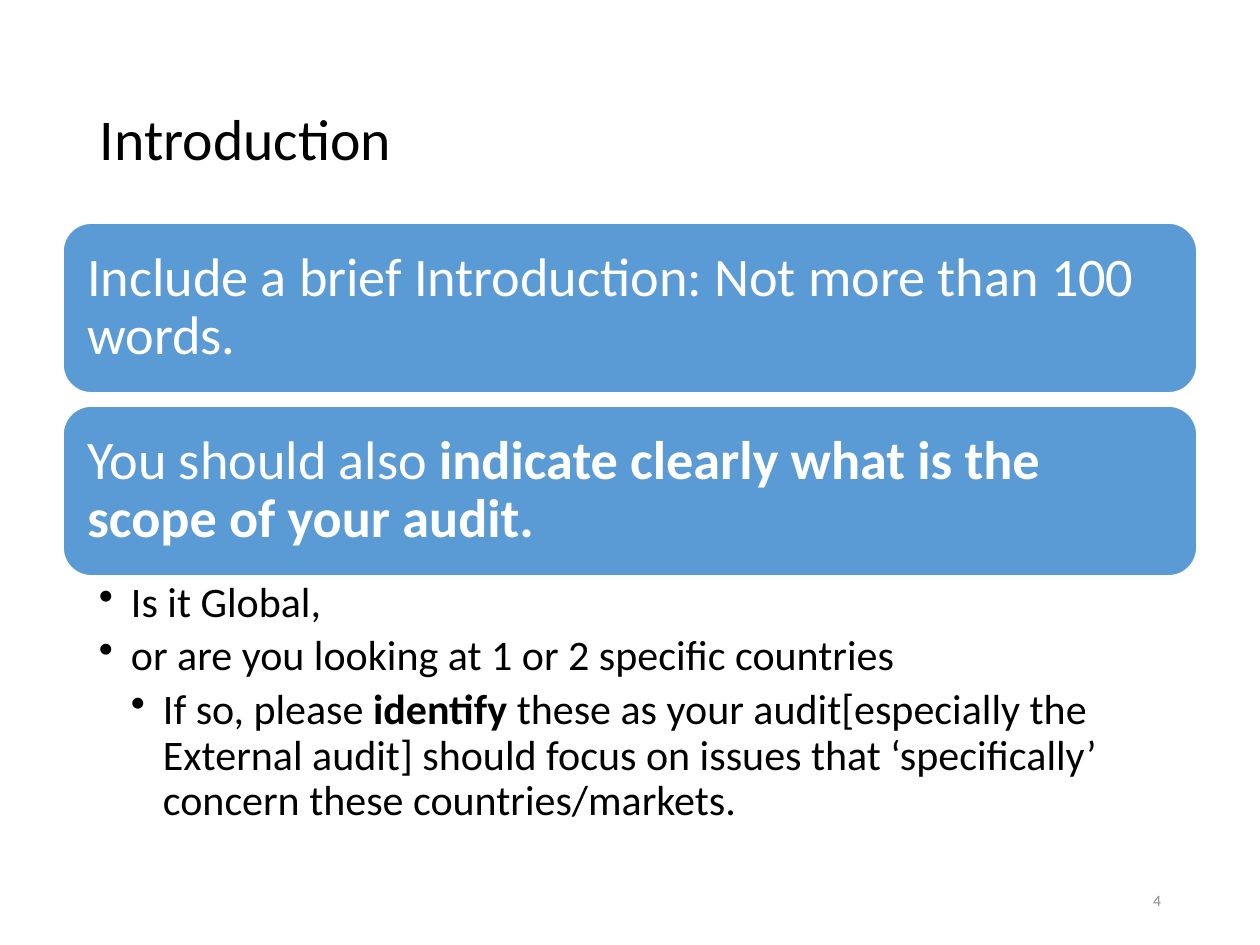
import pptx
import pptx.util
import pptx.dml.color
import pptx.enum.shapes
import pptx.enum.text
import pptx.oxml.ns
from lxml import etree

PX = 914400 / 126
COLORS = {"ink": "000000", "card": "5B9BD5", "paper": "FFFFFF", "muted": "8C8C8C"}
ALIGN = pptx.enum.text.PP_ALIGN
ANCHOR = pptx.enum.text.MSO_ANCHOR


def px(length):
    return pptx.util.Emu(round(length * PX))


def rgb(name):
    return pptx.dml.color.RGBColor.from_string(COLORS[name])


class Deck:
    font = "Calibri"
    line_spacing = 0.9
    indent = 32

    def __init__(self, width, height):
        self.prs = pptx.Presentation()
        self.prs.slide_width, self.prs.slide_height = px(width), px(height)
        self.slide = self.prs.slides.add_slide(self.prs.slide_layouts[6])

    def frame(self, shape, anchor, insets):
        frame = shape.text_frame
        frame.word_wrap = True
        frame.vertical_anchor = anchor
        (frame.margin_left, frame.margin_top,
         frame.margin_right, frame.margin_bottom) = map(px, insets)
        return frame

    def add_runs(self, paragraph, runs, size, color, align=ALIGN.LEFT):
        """Fill a paragraph from (text, bold) pairs."""
        paragraph.alignment = align
        paragraph.line_spacing = self.line_spacing
        for text, bold in runs:
            run = paragraph.add_run()
            run.text = text
            run.font.name = self.font
            run.font.size = pptx.util.Pt(size)
            run.font.bold = bold
            run.font.color.rgb = rgb(color)

    def text(self, box, text, size, color, align=ALIGN.LEFT):
        label = self.slide.shapes.add_textbox(*map(px, box))
        frame = self.frame(label, ANCHOR.MIDDLE, (13, 6, 13, 6))
        self.add_runs(frame.paragraphs[0], [(text, False)], size, color, align)

    def card(self, box, runs):
        card = self.slide.shapes.add_shape(
            pptx.enum.shapes.MSO_SHAPE.ROUNDED_RECTANGLE, *map(px, box))
        card.shadow.inherit = False
        card.fill.solid()
        card.fill.fore_color.rgb = rgb("card")
        card.line.color.rgb = rgb("paper")
        card.line.width = pptx.util.Pt(1)
        frame = self.frame(card, ANCHOR.MIDDLE, (16, 16, 16, 16))
        self.add_runs(frame.paragraphs[0], runs, 31, "paper")

    def bullets(self, box, items):
        """Lay out (level, runs) items as a bulleted list."""
        listing = self.slide.shapes.add_textbox(*map(px, box))
        frame = self.frame(listing, ANCHOR.TOP, (36, 5, 30, 5))
        for index, (level, runs) in enumerate(items):
            paragraph = frame.add_paragraph() if index else frame.paragraphs[0]
            self.add_runs(paragraph, runs, 24, "ink")
            paragraph.level = level
            paragraph.space_after = pptx.util.Pt(4.8)
            props = paragraph._p.get_or_add_pPr()
            props.set("marL", str(px(self.indent * level)))
            props.set("indent", str(px(-self.indent)))
            bullet = etree.SubElement(props, pptx.oxml.ns.qn("a:buChar"))
            bullet.set("char", "•")


def main():
    deck = Deck(1260, 945)

    # Title
    deck.text((87, 50, 1086, 183), "Introduction", 33, "ink")

    # Instruction cards
    instructions = [
        [("Include a brief Introduction: Not more than 100 words.", False)],
        [("You should also ", False),
         ("indicate clearly what is the scope of your audit.", True)],
    ]
    left, top, width, height, gap = 63, 223, 1134, 170, 13
    for row, runs in enumerate(instructions):
        deck.card((left, top + row * (height + gap), width, height), runs)

    # Scope questions
    deck.bullets((left, 576, width, 266), [
        (1, [("Is it Global,", False)]),
        (1, [("or are you looking at 1 or 2 specific countries", False)]),
        (2, [("If so, please ", False), ("identify", True),
             (" these as your audit[especially the External audit] should focus "
              "on issues that ‘specifically’ concern these countries/markets.", False)]),
    ])

    # Page number
    deck.text((890, 876, 284, 50), "4", 9, "muted", ALIGN.RIGHT)

    deck.prs.save("out.pptx")


if __name__ == "__main__":
    main()
